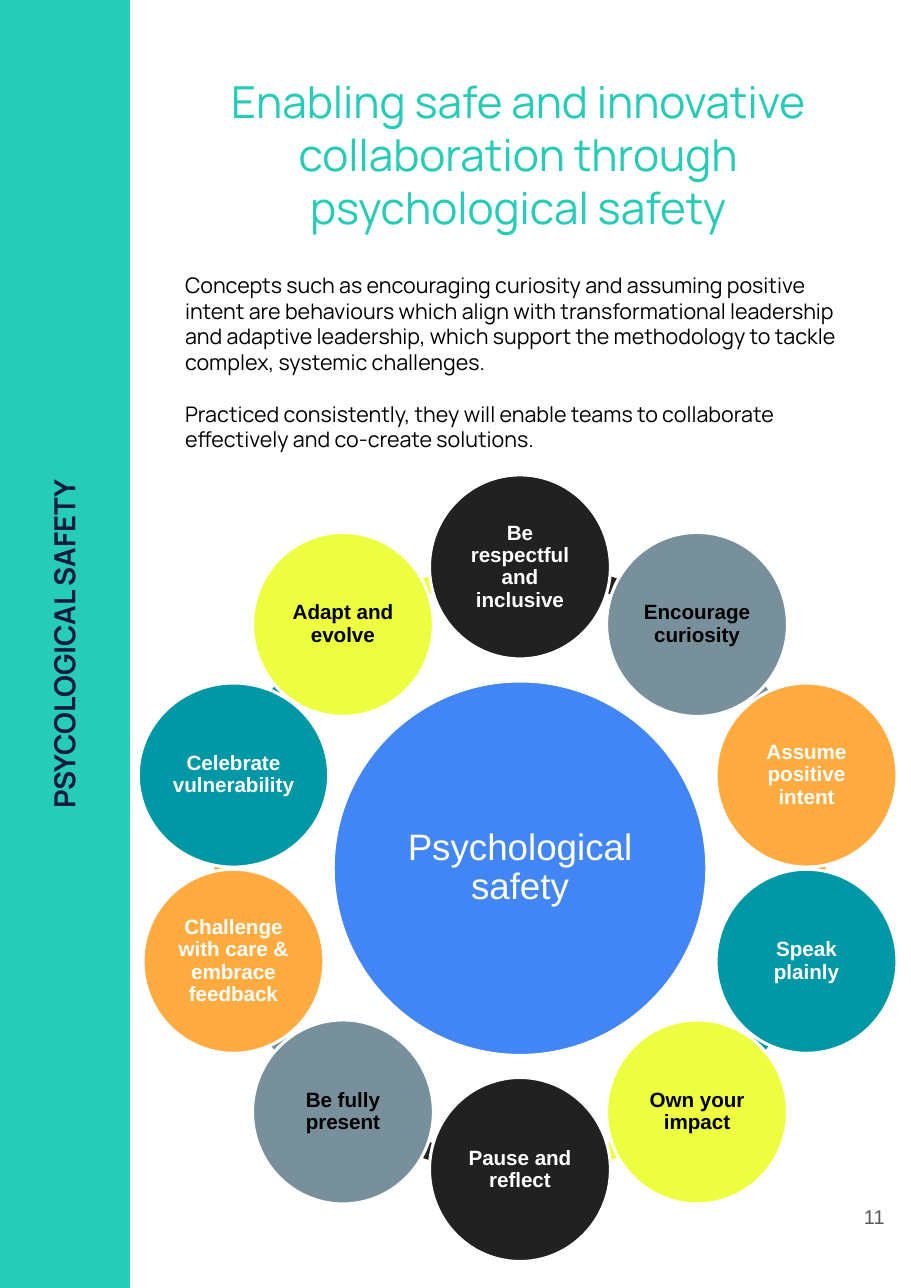
from math import cos, radians, sin
from typing import NamedTuple

from pptx import Presentation
from pptx.dml.color import RGBColor
from pptx.enum.shapes import MSO_SHAPE as Preset
from pptx.enum.text import MSO_ANCHOR as Anchor, MSO_AUTO_SIZE as AutoSize, PP_ALIGN as Align
from pptx.oxml.ns import qn
from pptx.util import Inches, Pt

COLOURS = {
    "mint": "26CCB8", "navy": "121A3D", "white": "FFFFFF", "black": "000000",
    "page grey": "595959", "blue": "4285F4", "charcoal": "212121",
    "slate": "78909C", "orange": "FFAB40", "teal": "0097A7", "lime": "EEFF41",
}
# Fill and text colour, repeated around the ring
NODE_STYLES = [("charcoal", "white"), ("slate", "black"), ("orange", "white"),
               ("teal", "white"), ("lime", "black")]
# Clockwise from the top
BEHAVIOURS = [
    "Be respectful and inclusive", "Encourage curiosity", "Assume positive intent",
    "Speak plainly", "Own your impact", "Pause and reflect", "Be fully present",
    "Challenge with care & embrace feedback", "Celebrate vulnerability",
    "Adapt and evolve",
]
WIDE_BEHAVIOUR = "Celebrate vulnerability"
INTRODUCTION = [
    "Concepts such as encouraging curiosity and assuming positive intent are behaviours "
    "which align with transformational leadership and adaptive leadership, which support "
    "the methodology to tackle complex, systemic challenges.",
    "Practiced consistently, they will enable teams to collaborate effectively and "
    "co-create solutions.",
]


class Box(NamedTuple):
    left: float
    top: float
    width: float
    height: float

    def share(self, left, top, width, height):
        """Return an inner box given in percent of this one."""
        return Box(self.left + self.width * left / 100, self.top + self.height * top / 100,
                   self.width * width / 100, self.height * height / 100)

    def centred(self, width, height, dx=0, dy=0):
        """Return a box around this one's centre, moved by dx and dy, all in inches."""
        return Box(self.left + (self.width - width) / 2 + dx,
                   self.top + (self.height - height) / 2 + dy, width, height)

    def emu(self):
        return [Inches(length) for length in self]


def colour(name):
    return RGBColor.from_string(COLOURS[name])


def move(placeholder, box):
    placeholder.left, placeholder.top, placeholder.width, placeholder.height = box.emu()


def write(holder, *paragraphs, size, ink, font="Arial", bold=False, align=Align.CENTER,
          anchor=Anchor.TOP, inset=(0.1, 0.1), line_spacing=1.0, gap=0):
    frame = holder.text_frame
    frame.word_wrap = True
    frame.auto_size = AutoSize.NONE
    frame.vertical_anchor = anchor
    frame.margin_left = frame.margin_right = Inches(inset[0])
    frame.margin_top = frame.margin_bottom = Inches(inset[1])
    for index, text in enumerate(paragraphs):
        paragraph = frame.add_paragraph() if index else frame.paragraphs[0]
        paragraph.alignment = align
        paragraph.line_spacing = line_spacing
        paragraph.space_before = Pt(gap if index else 0)
        run = paragraph.add_run()
        run.text = text
        run.font.size, run.font.name, run.font.bold = Pt(size), font, bold
        run.font.color.rgb = colour(ink)


def add_filled(slide, preset, box, fill, outline=None):
    shape = slide.shapes.add_shape(preset, *box.emu())
    shape.shadow.inherit = False
    shape.fill.solid()
    shape.fill.fore_color.rgb = colour(fill)
    if outline:
        shape.line.color.rgb = colour(outline)
        shape.line.width = Pt(2)
    else:
        shape.line.fill.background()
    return shape


def add_heading(slide, box):
    move(slide.shapes.title, box)
    write(slide.shapes.title,
          "Enabling safe and innovative collaboration through psychological safety",
          size=28.8, ink="mint", font="Manrope", inset=(0.13, 0.13))


def add_introduction(slide, box):
    introduction = slide.placeholders[1]
    move(introduction, box)
    write(introduction, *INTRODUCTION, size=14, ink="black", font="Manrope",
          align=Align.LEFT, inset=(0.1, 0.05), gap=16.8)
    for paragraph in introduction.text_frame.paragraphs:
        properties = paragraph._p.get_or_add_pPr()
        properties.set("marL", "0")
        properties.set("indent", "0")
        properties.append(properties.makeelement(qn("a:buNone"), {}))


def add_sidebar(slide, box):
    add_filled(slide, Preset.RECTANGLE, box, "mint")
    section = slide.shapes.add_textbox(*box.centred(4, 0.52, dx=-0.01).emu())
    section.rotation = 270
    write(section, "PSYCOLOGICAL SAFETY", size=19, ink="navy", font="Manrope", bold=True)


def add_page_number(slide, box):
    number = slide.shapes.add_textbox(*box.emu())
    write(number, "11", size=13, ink="page grey", align=Align.RIGHT,
          anchor=Anchor.MIDDLE, inset=(0.13, 0.13))


def add_behaviour_ring(slide, box):
    """Place the behaviours evenly on a circle around the central theme."""
    side = box.height
    step = 360 / len(BEHAVIOURS)
    orbit = side * 0.383
    node_height = side * 0.234
    nodes = []
    for index, behaviour in enumerate(BEHAVIOURS):
        fill, ink = NODE_STYLES[index % len(NODE_STYLES)]
        nodes.append((behaviour, 270 + index * step, fill, ink))

    for _, angle, fill, _ in nodes:
        link = add_filled(slide, Preset.BLOCK_ARC, box.centred(side * 0.777, side * 0.777), fill)
        # An angle adjustment of 0.6 stands for one degree
        link.adjustments[0] = angle % 360 * 0.6
        link.adjustments[1] = (angle + step) % 360 * 0.6
        link.adjustments[2] = 0.028

    hub = add_filled(slide, Preset.OVAL, box.centred(side * 0.475, side * 0.476), "blue", "white")
    write(hub, "Psychological safety", size=24, ink="white", anchor=Anchor.MIDDLE,
          inset=(0.03, 0.03), line_spacing=0.9)

    for behaviour, angle, fill, ink in nodes:
        node_width = side * (0.242 if behaviour == WIDE_BEHAVIOUR else 0.23)
        place = box.centred(node_width, node_height,
                            orbit * cos(radians(angle)), orbit * sin(radians(angle)))
        node = add_filled(slide, Preset.OVAL, place, fill, "white")
        write(node, behaviour, size=13.5, ink=ink, bold=True, anchor=Anchor.MIDDLE,
              inset=(0.02, 0.02), line_spacing=0.9)


def main():
    page = Box(0, 0, 8.27, 11.69)
    deck = Presentation()
    deck.slide_width, deck.slide_height = Inches(page.width), Inches(page.height)
    slide = deck.slides.add_slide(deck.slide_layouts[1])
    add_heading(slide, page.share(19.1, 4.7, 75.57, 11.12))
    add_introduction(slide, page.share(19.1, 20.7, 76.54, 17.02))
    add_behaviour_ring(slide, page.share(13.91, 36.87, 86.34, 61.08))
    add_sidebar(slide, page.share(0, 0, 14.27, 100))
    add_page_number(slide, page.share(92.62, 90.68, 6.05, 7.61))
    deck.save("out.pptx")


if __name__ == "__main__":
    main()
